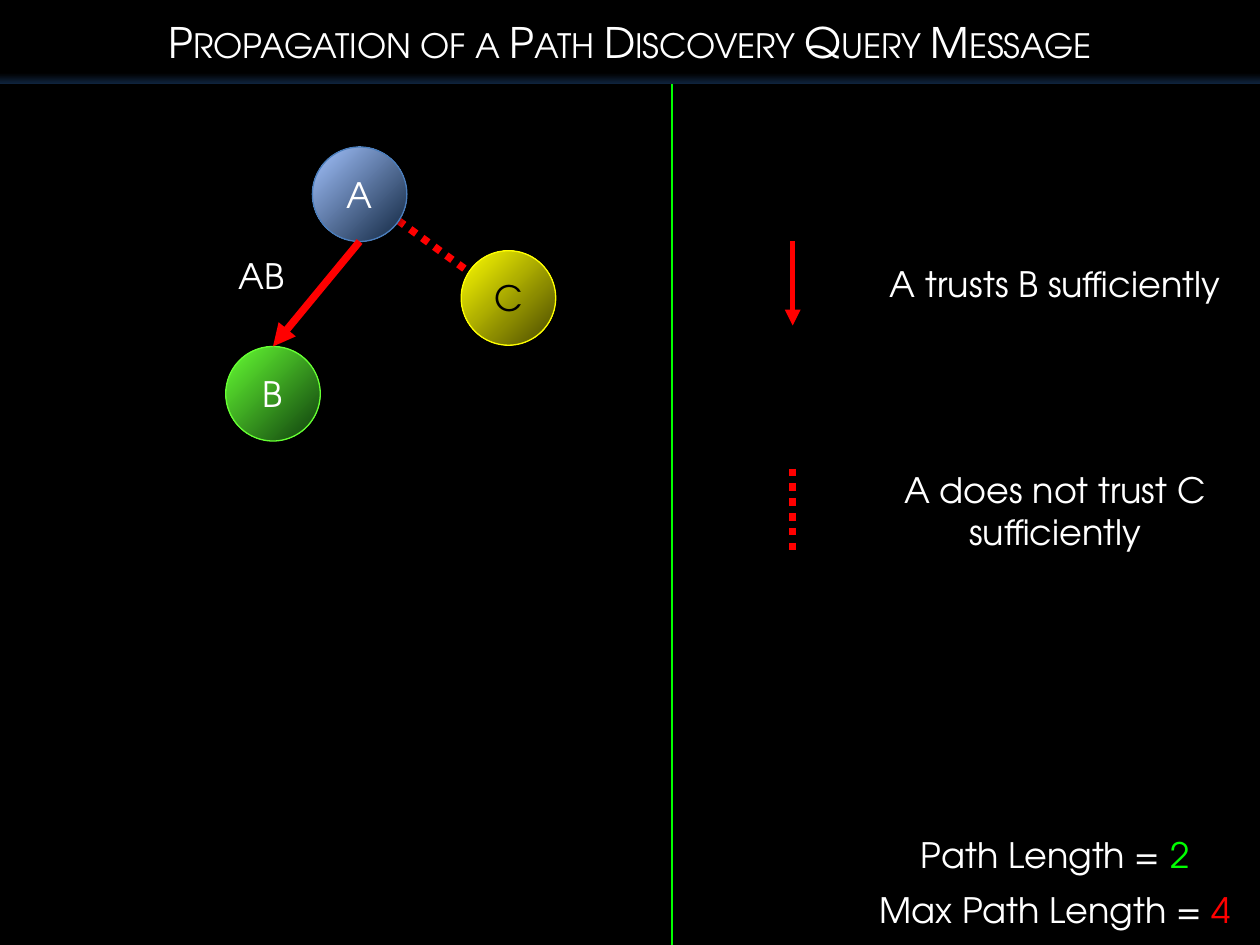
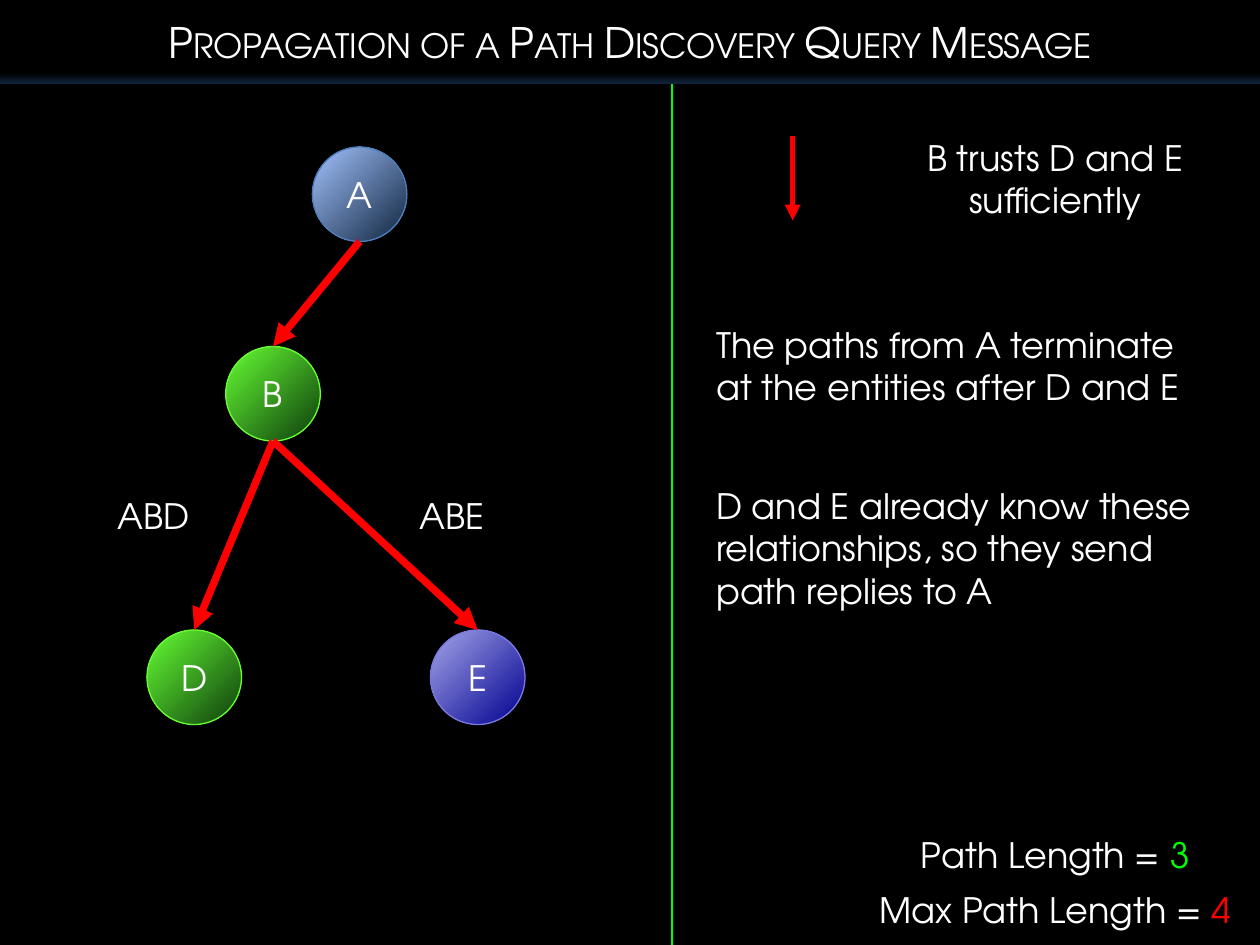
from pptx import Presentation, util as u
from pptx.dml.color import RGBColor
from pptx.enum import dml, shapes, text
from pptx.oxml import ns, parse_xml

COLORS = {
    "black": "000000", "white": "FFFFFF", "red": "FF0000", "green": "00FF00", "navy": "0F243E",
    "sky": "A4C4FF", "blue": "4B7EBC", "forest": "0E3C0D", "lime": "66FF33", "olive": "484800",
    "yellow": "FFFF00", "indigo": "000090", "lavender": "A5A5E9", "violet": "7878DE",
}
RGB = {name: RGBColor.from_string(value) for name, value in COLORS.items()}
FONT = "TeX Gyre Adventor"
TITLE = "Propagation of a Path Discovery Query Message"
CELL = u.Inches(10) / 480
COLUMNS, ROWS = 480, 360
BAND_ROWS, DIVIDER = 32, 256
RADIUS = 18
LEGEND_LEFT, LEGEND_WIDTH, LEGEND_ARROW = 324, 156, 302
LINE_ROWS = 21
LEFT, CENTER = text.PP_ALIGN.LEFT, text.PP_ALIGN.CENTER

NODES = {
    "A": (137, 74, "navy", "sky", "blue", "white"),
    "B": (104, 150, "forest", "lime", "lime", "white"),
    "C": (193.7, 113.5, "olive", "yellow", "yellow", "black"),
    "D": (74, 258, "forest", "lime", "lime", "white"),
    "E": (182, 258, "indigo", "lavender", "violet", "white"),
}
SLIDES = [
    {
        "layout": 5, "nodes": "CAB", "arrows": ["AB"], "length": "2",
        "distrust": [((151.7, 84), (182, 106))],
        "labels": [("AB", 86, 94.5, 33)],
        "legend": [("A trusts B sufficiently", 97.5, 1, 92, False),
                   ("A does not trust C sufficiently", 176, 2, 178.5, True)],
        "notes": [],
    },
    {
        "layout": 1, "nodes": "DABE", "arrows": ["AB", "BD", "BE"], "length": "3",
        "distrust": [],
        "labels": [("ABD", 40, 186, 41), ("ABE", 155, 186, 41)],
        "legend": [("B trusts D and E sufficiently", 49.5, 2, 52, False)],
        "notes": ["The paths from A terminate at the entities after D and E",
                  "D and E already know these relationships, so they send path replies to A"],
    },
]
NAMESPACE = ns.nsdecls("a")
SHADOW = (f'<a:outerShdw {NAMESPACE} blurRad="40000" dist="23000" dir="5400000" rotWithShape="0">'
          '<a:srgbClr val="000000"><a:alpha val="35000"/></a:srgbClr></a:outerShdw>')
CORNER = (f'<a:path {NAMESPACE} path="circle">'
          '<a:fillToRect l="100000" t="100000"/></a:path>')
OUTLINE = (f'<a:ln {NAMESPACE} w="9525"><a:solidFill><a:srgbClr val="000000"/>'
           '</a:solidFill></a:ln>')


def write(shape, box, paragraphs, alignment=CENTER, size=20, anchor=text.MSO_ANCHOR.TOP, gap=0):
    for side, length in zip(("left", "top", "width", "height"), box):
        setattr(shape, side, round(length * CELL))
    frame = shape.text_frame
    frame_format = {"word_wrap": True, "auto_size": text.MSO_AUTO_SIZE.NONE,
                    "vertical_anchor": anchor}
    for name, value in frame_format.items():
        setattr(frame, name, value)
    for index, runs in enumerate(paragraphs):
        paragraph = frame.add_paragraph() if index else frame.paragraphs[0]
        paragraph.alignment = alignment
        paragraph.space_before = u.Pt(gap if index else 0)
        for words, color in runs:
            run = paragraph.add_run()
            run.text = words
            for name, value in {"name": FONT, "size": u.Pt(size), "bold": False}.items():
                setattr(run.font, name, value)
            run.font.color.rgb = RGB[color]
    return frame.paragraphs


def draw_line(slide, start, end, color="red", width=4.25, dotted=False, arrow=False):
    points = [round(value * CELL) for value in (*start, *end)]
    connector = slide.shapes.add_connector(shapes.MSO_CONNECTOR.STRAIGHT, *points)
    connector.line.color.rgb = RGB[color]
    connector.line.width = u.Pt(width)
    if dotted:
        connector.line.dash_style = dml.MSO_LINE.ROUND_DOT
    properties = connector.element.spPr
    if arrow:
        tail = parse_xml(f'<a:tailEnd {NAMESPACE} type="triangle"/>')
        properties.find(ns.qn("a:ln")).append(tail)
    properties.append(parse_xml(f"<a:effectLst {NAMESPACE}/>"))
    return connector


presentation = Presentation()
presentation.slide_width, presentation.slide_height = u.Inches(10), u.Inches(7.5)
background = presentation.slide_master.background.fill
background.solid()
background.fore_color.rgb = RGB["black"]

for content in SLIDES:
    slide = presentation.slides.add_slide(presentation.slide_layouts[content["layout"]])
    title = slide.shapes.title
    heading = write(title, (0, 0, COLUMNS, BAND_ROWS), [[(TITLE, "white")]],
                    size=24, anchor=text.MSO_ANCHOR.MIDDLE)
    heading[0].runs[0].font._element.set("cap", "small")
    title.fill.gradient()
    title.fill.gradient_angle = 270
    for stop, position, color in zip(title.fill.gradient_stops, (0.87, 1), ("black", "navy")):
        stop.position = position
        stop.color.rgb = RGB[color]
    draw_line(slide, (DIVIDER, BAND_ROWS), (DIVIDER, ROWS), "green", 0.75)

    for start, end in content["distrust"]:
        draw_line(slide, start, end, dotted=True)

    circles = {}
    for letter in content["nodes"]:
        x, y, dark, light, edge, ink = NODES[letter]
        circle = slide.shapes.add_shape(shapes.MSO_SHAPE.OVAL, 0, 0, 0, 0)
        circles[letter] = circle
        lines = write(circle, (x - RADIUS, y - RADIUS, 2 * RADIUS, 2 * RADIUS),
                      [[(letter, ink)]], anchor=text.MSO_ANCHOR.MIDDLE)
        circle.fill.gradient()
        for stop, position, color in zip(circle.fill.gradient_stops, (0, 1), (dark, light)):
            stop.position = position
            stop.color.rgb = RGB[color]
        gradient = circle.element.spPr.find(ns.qn("a:gradFill"))
        gradient.replace(gradient.find(ns.qn("a:lin")), parse_xml(CORNER))
        circle.line.color.rgb = RGB[edge]
        circle.line.width = u.Pt(0.75)
        circle.shadow.inherit = False
        circle.element.spPr.find(ns.qn("a:effectLst")).append(parse_xml(SHADOW))
        if ink == "black":
            lines[0].runs[0].font._element.insert(0, parse_xml(OUTLINE))

    for source, target in content["arrows"]:
        (x1, y1), (x2, y2) = NODES[source][:2], NODES[target][:2]
        arrow = draw_line(slide, (x1, y1 + RADIUS), (x2, y2 - RADIUS), arrow=True)
        arrow.end_connect(circles[target], 0)

    for label, left, top, width in content["labels"]:
        write(slide.shapes.add_textbox(0, 0, 0, 0), (left, top, width, LINE_ROWS),
              [[(label, "white")]], LEFT)

    for words, top, line_count, arrow_top, dotted in content["legend"]:
        height = LINE_ROWS + 16 * (line_count - 1)
        write(slide.shapes.add_textbox(0, 0, 0, 0),
              (LEGEND_LEFT, top, LEGEND_WIDTH, height), [[(words, "white")]])
        draw_line(slide, (LEGEND_ARROW, arrow_top), (LEGEND_ARROW, arrow_top + 32),
                  width=4.25 if dotted else 3, dotted=dotted, arrow=not dotted)

    counters = [("Path Length = ", content["length"], "green"), ("Max Path Length = ", "4", "red")]
    for row, (words, number, color) in enumerate(counters):
        write(slide.shapes.add_textbox(0, 0, 0, 0),
              (LEGEND_LEFT, 315 + row * LINE_ROWS, LEGEND_WIDTH, LINE_ROWS),
              [[(words, "white"), (number, color)]])

    if content["notes"]:
        for paragraph in write(slide.placeholders[1], (268, 121, 200, 118),
                               [[(note, "white")] for note in content["notes"]], LEFT, gap=44):
            properties = paragraph._p.get_or_add_pPr()
            for name in ("marL", "indent"):
                properties.set(name, "0")
            properties.append(parse_xml(f"<a:buNone {NAMESPACE}/>"))

presentation.save("out.pptx")
